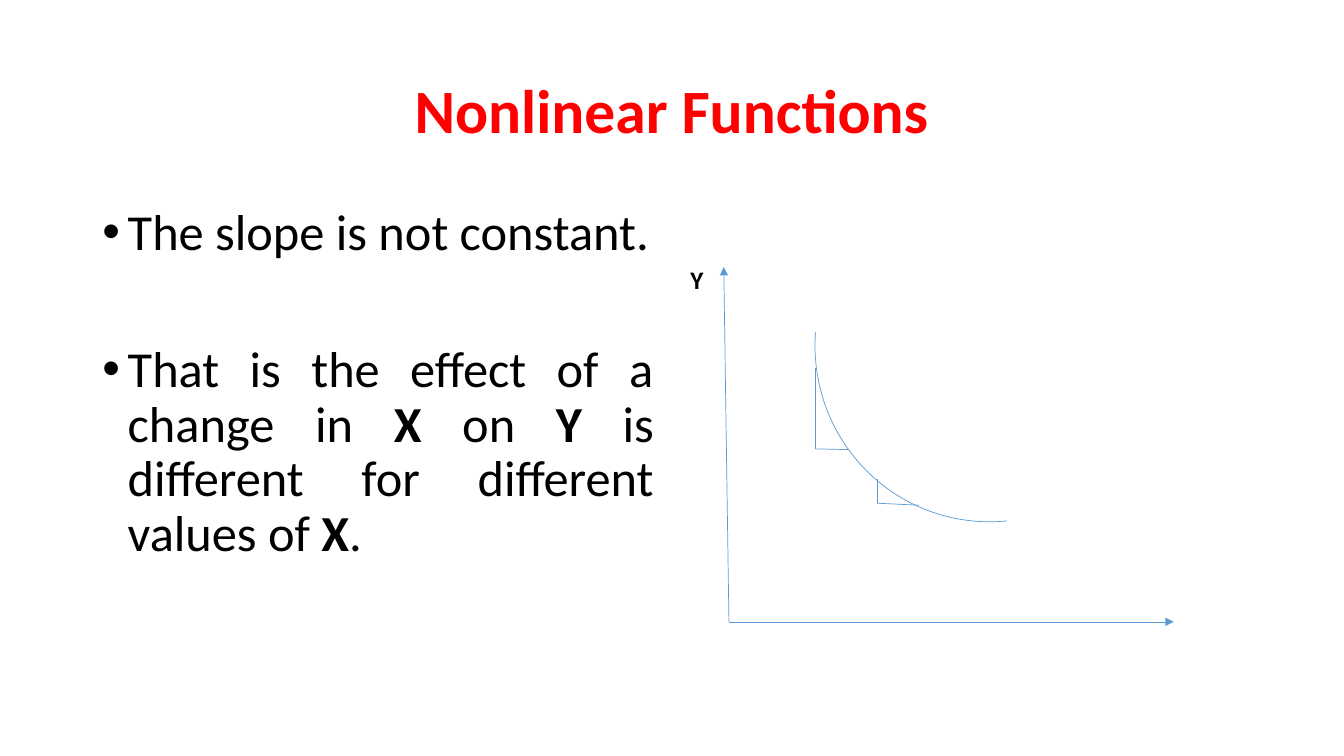
"""Build the slide on nonlinear functions with its slope diagram."""
import dataclasses

import pptx
import pptx.dml.color
import pptx.enum.shapes
import pptx.enum.text
import pptx.oxml
import pptx.oxml.ns
import pptx.util
from pptx.util import Cm

RGB = pptx.dml.color.RGBColor.from_string
ALIGN = pptx.enum.text.PP_ALIGN
ANCHOR = pptx.enum.text.MSO_ANCHOR


@dataclasses.dataclass(frozen=True)
class Theme:
    font: str = "Calibri"
    title: str = "FF0000"
    text: str = "000000"
    line: str = "5B9BD5"
    title_size: int = 44
    body_size: int = 36
    label_size: int = 18
    line_width: float = 0.5


theme = Theme()

prs = pptx.Presentation()
prs.slide_width, prs.slide_height = Cm(33.87), Cm(19.05)
s = prs.slides.add_slide(prs.slide_layouts[6])


def add_text(box, paragraphs, size, color, anchor=ANCHOR.TOP):
    tf = s.shapes.add_textbox(*map(Cm, box)).text_frame
    tf.word_wrap = True
    tf.vertical_anchor = anchor
    for i, (align, space_before, runs) in enumerate(paragraphs):
        p = tf.paragraphs[0] if i == 0 else tf.add_paragraph()
        p.alignment = align
        p.line_spacing = 0.9
        p.space_before = pptx.util.Pt(space_before)
        for text, bold in runs:
            r = p.add_run()
            r.text = text
            r.font.name = theme.font
            r.font.size = pptx.util.Pt(size)
            r.font.bold = bold
            r.font.color.rgb = RGB(color)
    return tf


def add_line(start, end, arrow=False):
    c = s.shapes.add_connector(
        pptx.enum.shapes.MSO_CONNECTOR.STRAIGHT, *map(Cm, start + end))
    c.line.color.rgb = RGB(theme.line)
    c.line.width = pptx.util.Pt(theme.line_width)
    if arrow:
        tail = pptx.oxml.parse_xml(
            f'<a:tailEnd {pptx.oxml.ns.nsdecls("a")} type="triangle"/>')
        c.line._get_or_add_ln().append(tail)
    effects = pptx.oxml.parse_xml(f'<a:effectLst {pptx.oxml.ns.nsdecls("a")}/>')
    c._element.spPr.append(effects)


add_text((2.33, 1.02, 29.21, 3.68),
         [(ALIGN.CENTER, 0, [("Nonlinear Functions", True)])],
         theme.title_size, theme.title, ANCHOR.MIDDLE)

points = [
    (ALIGN.LEFT, 0, [("The slope is not constant.", False)]),
    (ALIGN.JUSTIFY, 59.5, [
        ("That is the effect of a change in ", False),
        ("X ", True),
        ("on ", False),
        ("Y ", True),
        ("is different for different values of ", False),
        ("X", True),
        (".", False),
    ]),
]
tf = add_text((2.33, 5.08, 14.4, 12.09), points, theme.body_size, theme.text)
for p in tf.paragraphs:
    pPr = p._p.get_or_add_pPr()
    pPr.set("marL", str(Cm(0.64)))
    pPr.set("indent", str(-Cm(0.64)))
    for bullet in ('buFont {} typeface="Arial"', 'buChar {} char="•"'):
        pPr.append(pptx.oxml.parse_xml(
            f'<a:{bullet.format(pptx.oxml.ns.nsdecls("a"))}/>'))

add_text((17.15, 6.63, 1.1, 1),
         [(ALIGN.LEFT, 0, [("Y", True)])], theme.label_size, theme.text)

origin = (18.37, 15.67)
for tip in ((18.24, 6.73), (29.58, 15.67)):
    add_line(origin, tip, arrow=True)

curve = s.shapes.add_shape(pptx.enum.shapes.MSO_SHAPE.ARC,
                           Cm(20.54), Cm(4.29), Cm(8.79), Cm(8.86))
curve.adjustments[0] = 50.564
curve.adjustments[1] = 110.681
curve.shadow.inherit = False
curve.fill.background()
curve.line.color.rgb = RGB(theme.line)
curve.line.width = pptx.util.Pt(theme.line_width)

slope_steps = [
    ((20.54, 9.28), (20.54, 11.31), (21.39, 11.33)),
    ((22.1, 12.06), (22.1, 12.68), (23.16, 12.73)),
]
for top, corner, right in slope_steps:
    add_line(corner, top)
    add_line(corner, right)

prs.save("out.pptx")
